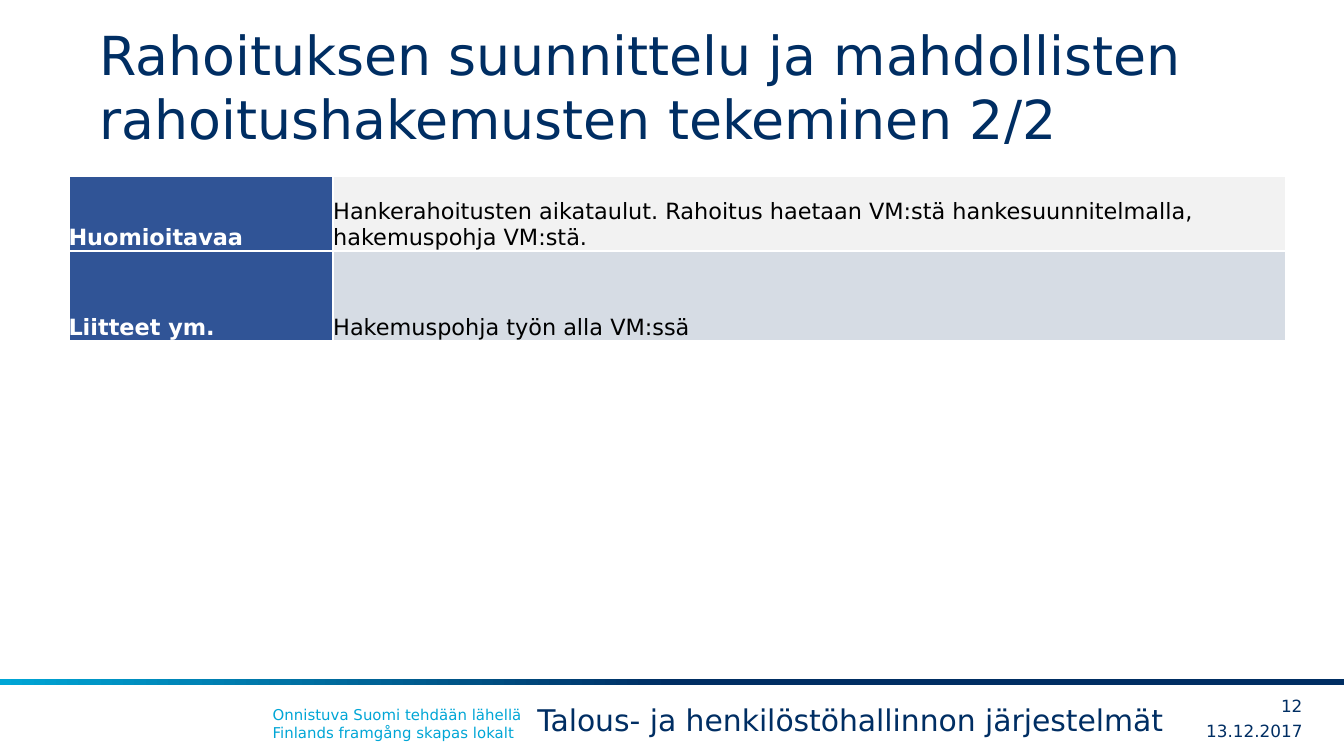
from lxml import etree
from pptx import Presentation
from pptx.dml.color import RGBColor
from pptx.enum.shapes import MSO_SHAPE as Preset
from pptx.enum.text import MSO_ANCHOR as Anchor, PP_ALIGN as Align
from pptx.oxml.ns import qn
from pptx.util import Pt

FONT = "DejaVu Sans"
COLORS = {
    "navy": "002E63",
    "cyan": "00A6D6",
    "label": "305496",
    "light": "F2F2F2",
    "blue_gray": "D6DCE4",
    "white": "FFFFFF",
    "black": "000000",
}


def rgb(name):
    return RGBColor.from_string(COLORS[name])


def write(frame, text, size=12, color="navy", bold=False, align=Align.LEFT):
    """Write one formatted paragraph; a newline becomes a line break."""
    frame.word_wrap = True
    paragraph = frame.paragraphs[0]
    paragraph.text = text.replace("\n", "\v")
    paragraph.alignment = align
    font = paragraph.font
    font.name, font.size, font.bold = FONT, Pt(size), bold
    font.color.rgb = rgb(color)


def add_text(slide, box, text, anchor=Anchor.TOP, inset=(7.2, 3.6), **style):
    frame = slide.shapes.add_textbox(*map(Pt, box)).text_frame
    frame.vertical_anchor = anchor
    frame.margin_left = frame.margin_right = Pt(inset[0])
    frame.margin_top = frame.margin_bottom = Pt(inset[1])
    write(frame, text, **style)


def set_borders(cell, color, width):
    properties = cell._tc.get_or_add_tcPr()
    for index, side in enumerate(("lnL", "lnR", "lnT", "lnB")):
        line = etree.Element(qn(f"a:{side}"), w=str(Pt(width)))
        fill = etree.SubElement(line, qn("a:solidFill"))
        etree.SubElement(fill, qn("a:srgbClr"), val=COLORS[color])
        properties.insert(index, line)


def add_title(slide, box):
    add_text(slide, box,
             "Rahoituksen suunnittelu ja mahdollisten rahoitushakemusten tekeminen 2/2",
             anchor=Anchor.BOTTOM, inset=(0, 3.6), size=28.8)


def add_notes_table(slide, box):
    rows = [
        ("Huomioitavaa",
         "Hankerahoitusten aikataulut. Rahoitus haetaan VM:stä "
         "hankesuunnitelmalla, hakemuspohja VM:stä.", "light", 40.3),
        ("Liitteet ym.", "Hakemuspohja työn alla VM:ssä", "blue_gray", 48.2),
    ]
    label_width = 141.8
    table = slide.shapes.add_table(len(rows), 2, *map(Pt, box)).table
    table.columns[0].width = Pt(label_width)
    table.columns[1].width = Pt(box[2] - label_width)

    for row, (label, content, shade, height) in zip(table.rows, rows):
        row.height = Pt(height)
        looks = [(label, "label", "white", True), (content, shade, "black", False)]
        for cell, (text, fill, color, bold) in zip(row.cells, looks):
            cell.margin_left = cell.margin_right = 0
            cell.margin_top = cell.margin_bottom = 0
            cell.vertical_anchor = Anchor.BOTTOM
            cell.fill.solid()
            cell.fill.fore_color.rgb = rgb(fill)
            set_borders(cell, "white", 1.5)
            write(cell.text_frame, text, color=color, bold=bold)


def add_footer(slide, box):
    left, top, width, _ = box

    # Gradient rule, cyan on the left
    rule = slide.shapes.add_shape(Preset.RECTANGLE, Pt(left), Pt(top), Pt(width), Pt(3.6))
    rule.shadow.inherit = False
    rule.line.fill.background()
    rule.fill.gradient()
    rule.fill.gradient_angle = 180
    for stop, (position, color) in zip(rule.fill.gradient_stops,
                                       [(0.5, "navy"), (1, "cyan")]):
        stop.position = position
        stop.color.rgb = rgb(color)

    # Slogan and subject
    add_text(slide, (left + 139, top + 10.8, 471, 26.6),
             "Onnistuva Suomi tehdään lähellä\nFinlands framgång skapas lokalt",
             size=8, color="cyan")
    add_text(slide, (left + 280.8, top + 8.6, 360, 26.6),
             "Talous- ja henkilöstöhallinnon järjestelmät", size=16)

    # Page number above date, sharing a right edge
    right = left + width - 22.3
    for text, offset, text_width in [("12", 6.5, 31), ("13.12.2017", 20.2, 71.3)]:
        add_text(slide, (right - text_width, top + offset, text_width, 15.8), text,
                 anchor=Anchor.MIDDLE, inset=(0, 0), size=9, align=Align.RIGHT)


def main():
    deck = Presentation()
    deck.slide_width, deck.slide_height = Pt(720), Pt(405)
    slide = deck.slides.add_slide(deck.slide_layouts[6])
    add_footer(slide, (0, 363.6, 720, 41.4))
    add_title(slide, (53.3, 16.6, 612.7, 67.7))
    add_notes_table(slide, (36.7, 94.3, 652.3, 88.5))
    deck.save("out.pptx")


if __name__ == "__main__":
    main()
